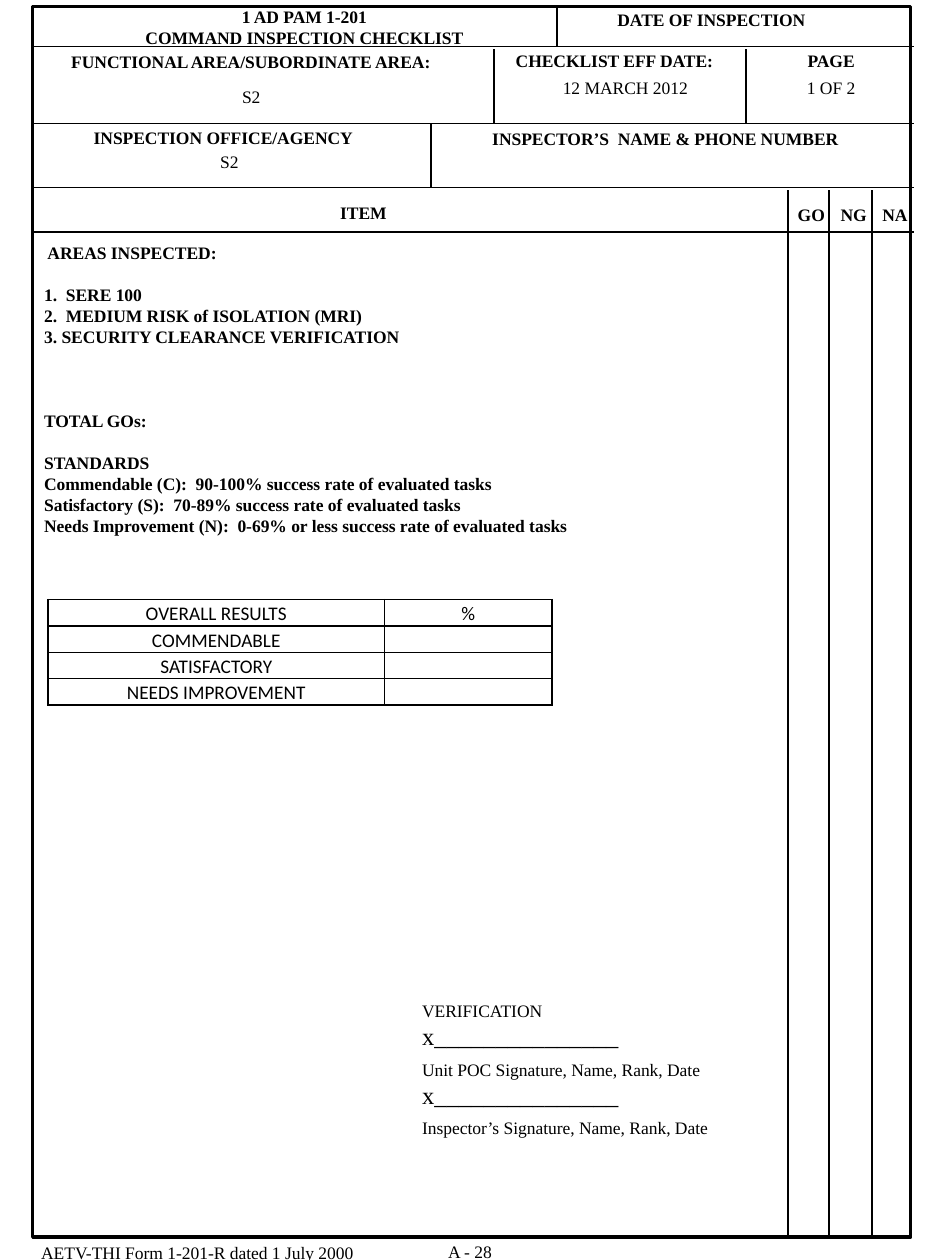
from lxml.etree import SubElement
from pptx import Presentation
from pptx.dml.color import RGBColor
from pptx.enum.shapes import MSO_CONNECTOR, MSO_SHAPE
from pptx.enum.text import MSO_ANCHOR, PP_ALIGN
from pptx.oxml.ns import qn
from pptx.util import Cm, Pt

COLORS = {"ink": "000000"}
INK = RGBColor.from_string(COLORS["ink"])
SERIF = "Times New Roman"

presentation = Presentation()
presentation.slide_width = Cm(19.05)
presentation.slide_height = Cm(25.4)
slide = presentation.slides.add_slide(presentation.slide_layouts[6])


def style(paragraph, size=10, bold=False, align=PP_ALIGN.LEFT, name=SERIF):
    paragraph.alignment = align
    paragraph.font.name = name
    paragraph.font.size = Pt(size)
    paragraph.font.bold = bold
    paragraph.font.color.rgb = INK


def add_text(lines, left, top, width, height, bold=False, align=PP_ALIGN.CENTER):
    shape = slide.shapes.add_textbox(Cm(left), Cm(top), Cm(width), Cm(height))
    shape.text_frame.word_wrap = False
    shape.text_frame.text = "\n".join(lines)
    for paragraph in shape.text_frame.paragraphs:
        style(paragraph, bold=bold, align=align)
    return shape.text_frame.paragraphs


frame = slide.shapes.add_shape(MSO_SHAPE.RECTANGLE, Cm(0.66), Cm(0.13), Cm(17.7), Cm(24.81))
frame.shadow.inherit = False
frame.fill.background()
frame.line.color.rgb = INK
frame.line.width = Pt(2)

rules = [(0.66, y, 18.42, y) for y in (0.94, 2.49, 3.78, 4.67)]
rules += [(x, 3.84, x, 24.94) for x in (15.88, 16.71, 17.58)]
rules += [(x, 0.99, x, 2.49) for x in (9.96, 15.04)]
rules += [(11.23, 0.13, 11.23, 0.94), (8.69, 2.51, 8.69, 3.78)]
for ends in rules:
    rule = slide.shapes.add_connector(MSO_CONNECTOR.STRAIGHT, *[Cm(end) for end in ends])
    rule.line.color.rgb = INK
    rule.line.width = Pt(1)
    SubElement(rule._element.spPr, qn("a:effectLst"))

add_text(["1 AD PAM 1-201", "COMMAND INSPECTION CHECKLIST"], 2.67, 0, 6.93, 1.09, bold=True)

headings = [
    ("DATE OF INSPECTION", 12.17, 0.05, 4.34),
    ("FUNCTIONAL AREA/SUBORDINATE AREA:", 1.08, 0.91, 7.95),
    ("CHECKLIST EFF DATE:", 10.11, 0.89, 4.55),
    ("PAGE", 15.6, 0.89, 2.31),
    ("INSPECTION OFFICE/AGENCY", 1.54, 2.44, 5.92),
    ("INSPECTOR’S  NAME & PHONE NUMBER", 9.65, 2.46, 7.52),
    ("ITEM", 6.6, 3.94, 1.45),
    ("GO", 15.82, 3.99, 1.07),
    ("NG", 16.69, 3.99, 1.04),
    ("NA", 17.53, 3.99, 1.02),
]
for text, left, top, width in headings:
    add_text([text], left, top, width, 0.69, bold=True)

entries = [
    ("S2", 4.62, 1.6, 0.89),
    ("12 MARCH 2012", 11.07, 1.42, 3.07),
    ("1 OF 2", 15.6, 1.42, 2.31),
    ("S2", 0.6, 2.92, 8.05),
    ("A - 28", 8.66, 24.9, 1.63),
]
for text, left, top, width in entries:
    add_text([text], left, top, width, 0.69)
add_text(["AETV-THI Form 1-201-R dated 1 July 2000"], 0.58, 24.92, 6.86, 0.69, align=PP_ALIGN.LEFT)

body = [
    (" AREAS INSPECTED:", 0),
    ("1.  SERE 100", 12),
    ("2.  MEDIUM RISK of ISOLATION (MRI)", 0),
    ("3. SECURITY CLEARANCE VERIFICATION", 0),
    ("TOTAL GOs:", 36),
    ("STANDARDS", 12),
    ("Commendable (C):  90-100% success rate of evaluated tasks", 0),
    ("Satisfactory (S):  70-89% success rate of evaluated tasks", 0),
    ("Needs Improvement (N):  0-69% or less success rate of evaluated tasks", 0),
]
paragraphs = add_text([text for text, gap in body], 0.64, 4.75, 15.16, 6.2,
                      bold=True, align=PP_ALIGN.LEFT)
for paragraph, (text, gap) in zip(paragraphs, body):
    paragraph.space_before = Pt(gap)

signature = "x_______________"
verification = ["VERIFICATION", signature, "Unit POC Signature, Name, Rank, Date",
                signature, "Inspector’s Signature, Name, Rank, Date"]
paragraphs = add_text(verification, 8.26, 20.03, 7.5, 3.1, align=PP_ALIGN.LEFT)
for paragraph in paragraphs[1:]:
    paragraph.line_spacing = Pt(16.8)
    if paragraph.text == signature:
        paragraph.font.size = Pt(14)

results = [("OVERALL RESULTS", "%"), ("COMMENDABLE", ""),
           ("SATISFACTORY", ""), ("NEEDS IMPROVEMENT", "")]
table = slide.shapes.add_table(4, 2, Cm(0.97), Cm(12.09), Cm(10.16), Cm(2.12)).table
table.first_row = False
table.horz_banding = False
for column, width in zip(table.columns, (6.78, 3.38)):
    column.width = Cm(width)
for row, texts in zip(table.rows, results):
    row.height = Cm(0.53)
    for cell, text in zip(row.cells, texts):
        cell.text = text
        cell.vertical_anchor = MSO_ANCHOR.BOTTOM
        cell.margin_left = cell.margin_right = Cm(0.18)
        cell.margin_top = cell.margin_bottom = 0
        paragraph = cell.text_frame.paragraphs[0]
        style(paragraph, size=11, align=PP_ALIGN.CENTER, name="Calibri")
        if not text:
            SubElement(paragraph._p, qn("a:endParaRPr"), sz="1100")
        properties = cell._tc.get_or_add_tcPr()
        for side in ("L", "R", "T", "B"):
            border = SubElement(properties, qn(f"a:ln{side}"), w=str(Pt(1)))
            fill = SubElement(border, qn("a:solidFill"))
            SubElement(fill, qn("a:srgbClr"), val=COLORS["ink"])
        cell.fill.background()

presentation.save("out.pptx")
